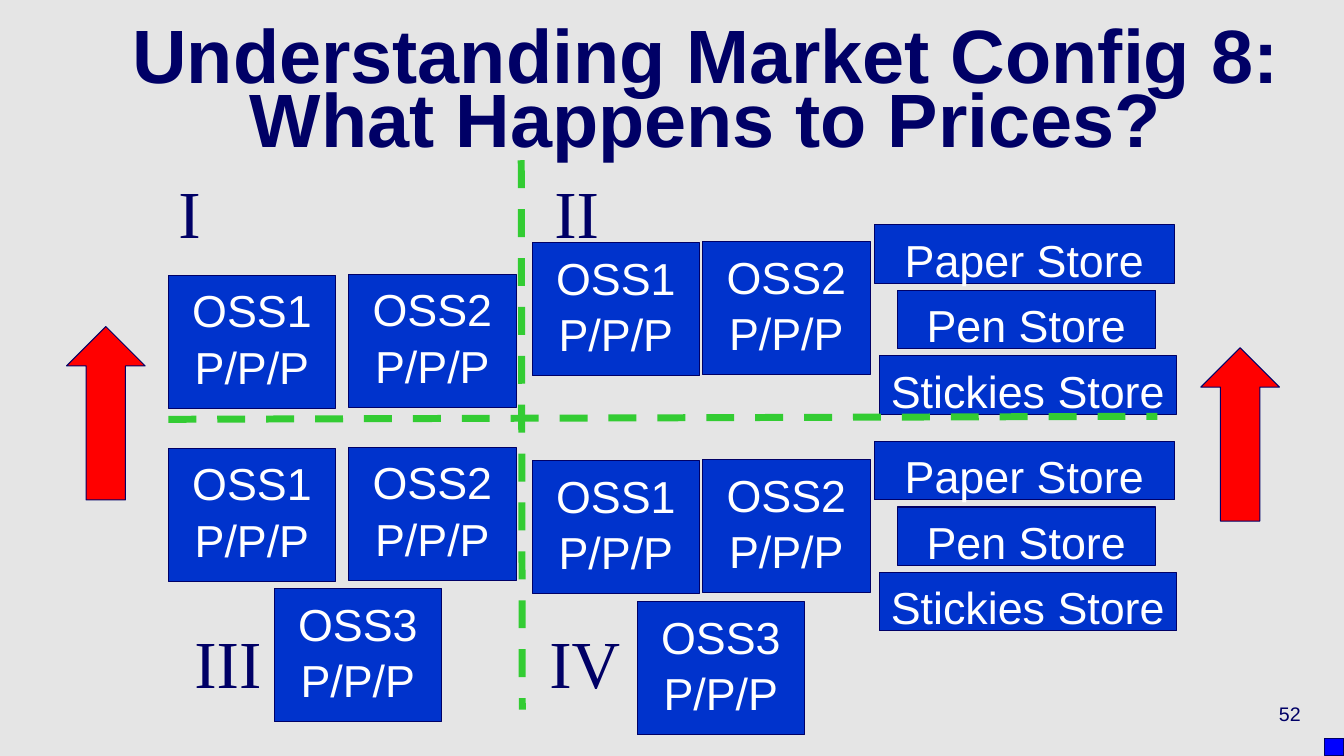
from dataclasses import dataclass

from lxml.etree import SubElement
from pptx import Presentation
from pptx.dml.color import RGBColor
from pptx.enum.dml import MSO_LINE
from pptx.enum.shapes import MSO_CONNECTOR, MSO_SHAPE
from pptx.enum.text import MSO_ANCHOR, PP_ALIGN
from pptx.oxml.ns import qn
from pptx.util import Inches, Pt


@dataclass(frozen=True)
class Theme:
    background: str = "E5E5E5"
    navy: str = "000066"
    block: str = "0033CC"
    corner: str = "0000FF"
    arrow: str = "FF0000"
    divider: str = "33CC33"
    white: str = "FFFFFF"
    sans: str = "Arial"
    serif: str = "Times New Roman"
    title_size: int = 54
    numeral_size: int = 48
    block_size: int = 32
    number_size: int = 14
    outline: float = 0.75
    divider_width: float = 5


THEME = Theme()
TITLE = "Understanding Market Config 8: What Happens to Prices?"
PAGE_NUMBER = "52"
PRODUCTS = "P/P/P"
# Name, left, width
STORES = [("Paper Store", 8.67, 2.98), ("Pen Store", 8.9, 2.56), ("Stickies Store", 8.72, 2.95)]
# Left of first block, top of first block, left of second block
UPPER_PAIRS = [(1.67, 2.73, 3.46), (5.28, 2.41, 6.97)]
LOWER_PAIRS = [(1.67, 4.45, 3.46), (5.28, 4.57, 6.97)]
UPPER_STORES_TOP, LOWER_STORES_TOP = 2.23, 4.38
THIRD_OSS = [(2.72, 5.84), (6.32, 5.97)]
NUMERALS = [("I", 1.67, 1.57, 0.33), ("II", 5.4, 1.57, 0.73),
            ("III", 1.83, 6.03, 0.97), ("IV", 5.35, 6.03, 0.97)]
DIVIDERS = [(5.17, 1.59, 5.18, 7.04), (1.67, 4.16, 11.48, 4.13)]
PRICE_ARROWS = [(0.19, 3.71), (11.44, 3.92)]

OSS_WIDTH, OSS_HEIGHT = 1.66, 1.32
STORE_HEIGHT, STORE_PITCH = 0.58, 0.65

presentation = Presentation()
presentation.slide_width, presentation.slide_height = Inches(13.33), Inches(7.5)
slide = presentation.slides.add_slide(presentation.slide_layouts[6])
slide.background.fill.solid()
slide.background.fill.fore_color.rgb = RGBColor.from_string(THEME.background)


def write(shape, text, size, color, font=THEME.sans, align=PP_ALIGN.CENTER,
          anchor=MSO_ANCHOR.TOP, spacing=1.0, bold=False, wrap=True):
    frame = shape.text_frame
    frame.text = text
    frame.word_wrap = wrap
    frame.vertical_anchor = anchor
    for paragraph in frame.paragraphs:
        paragraph.alignment = align
        paragraph.line_spacing = spacing
        for run in paragraph.runs:
            run.font.name, run.font.size, run.font.bold = font, Pt(size), bold
            run.font.color.rgb = RGBColor.from_string(color)


def add_text(left, top, width, height, text, size, **style):
    box = slide.shapes.add_textbox(Inches(left), Inches(top), Inches(width), Inches(height))
    write(box, text, size, THEME.navy, **style)


def add_filled(kind, left, top, width, height, color):
    shape = slide.shapes.add_shape(kind, Inches(left), Inches(top), Inches(width), Inches(height))
    shape.shadow.inherit = False
    shape.fill.solid()
    shape.fill.fore_color.rgb = RGBColor.from_string(color)
    shape.line.color.rgb = RGBColor.from_string(THEME.navy)
    shape.line.width = Pt(THEME.outline)
    return shape


def add_block(left, top, width, height, text):
    block = add_filled(MSO_SHAPE.RECTANGLE, left, top, width, height, THEME.block)
    write(block, text, THEME.block_size, THEME.white, spacing=1.05, wrap=False)


def add_oss(number, left, top):
    add_block(left, top, OSS_WIDTH, OSS_HEIGHT, f"OSS{number}\n{PRODUCTS}")


def add_row(pairs, stores_top):
    """Draw one row of the matrix: two OSS pairs and a stack of stores."""
    for first_left, top, second_left in pairs:
        add_oss(1, first_left, top)
        add_oss(2, second_left, top - 0.01)
    for index, (name, left, width) in enumerate(STORES):
        add_block(left, stores_top + index * STORE_PITCH, width, STORE_HEIGHT, name)


def add_divider(*ends):
    line = slide.shapes.add_connector(MSO_CONNECTOR.STRAIGHT, *map(Inches, ends))
    line.line.color.rgb = RGBColor.from_string(THEME.divider)
    line.line.width = Pt(THEME.divider_width)
    line.line.dash_style = MSO_LINE.DASH
    SubElement(line._element.spPr, qn("a:effectLst"))


add_text(0.89, 0.33, 12.22, 1.25, TITLE, THEME.title_size,
         anchor=MSO_ANCHOR.MIDDLE, spacing=0.7, bold=True)
add_text(10.22, 6.83, 2.78, 0.5, PAGE_NUMBER, THEME.number_size,
         align=PP_ALIGN.RIGHT, anchor=MSO_ANCHOR.MIDDLE)
add_filled(MSO_SHAPE.RECTANGLE, 13.14, 7.33, 0.19, 0.17, THEME.corner)

add_row(UPPER_PAIRS, UPPER_STORES_TOP)
for divider in DIVIDERS:
    add_divider(*divider)
for numeral, left, top, width in NUMERALS:
    add_text(left, top, width, 0.89, numeral, THEME.numeral_size, font=THEME.serif,
             align=PP_ALIGN.LEFT, spacing=1.1, wrap=True)
add_row(LOWER_PAIRS, LOWER_STORES_TOP)
for left, top in THIRD_OSS:
    add_oss(3, left, top)
for left, top in PRICE_ARROWS:
    arrow = add_filled(MSO_SHAPE.RIGHT_ARROW, left, top, 1.72, 0.78, THEME.arrow)
    arrow.rotation = 270

presentation.save("out.pptx")
